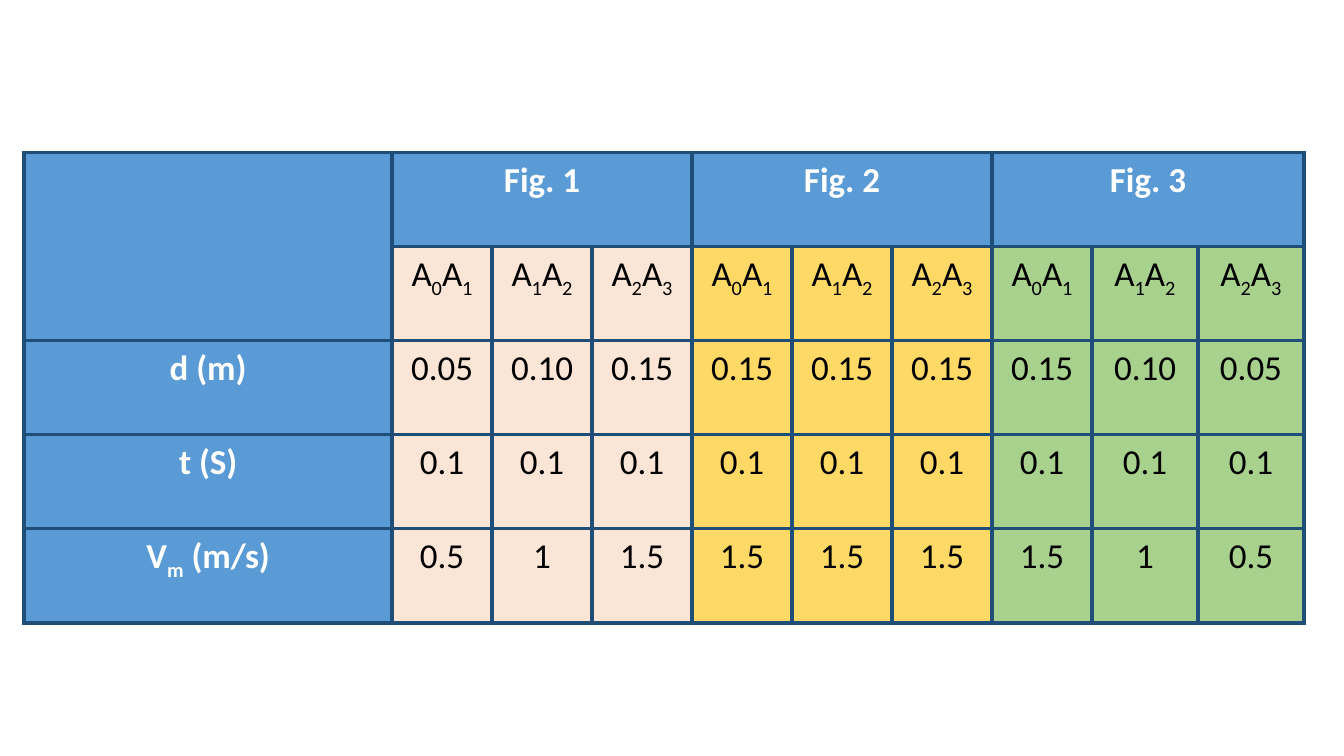
from dataclasses import dataclass

from lxml import etree
from pptx import Presentation
from pptx.dml.color import RGBColor
from pptx.enum.text import MSO_ANCHOR, PP_ALIGN
from pptx.oxml.ns import qn
from pptx.table import Table, _Cell
from pptx.util import Cm, Pt

CENTER = PP_ALIGN.CENTER
TOP = MSO_ANCHOR.TOP
COLORS = {
    "header": "5B9BD5",
    "border": "1F4E79",
    "header_text": "FFFFFF",
    "value_text": "000000",
    "peach": "FBE5D6",
    "yellow": "FFD966",
    "green": "A9D18E",
}
CELL_FORMAT = {
    "margin_left": Cm(0.18),
    "margin_right": Cm(0.18),
    "margin_top": Cm(0),
    "margin_bottom": Cm(0),
    "vertical_anchor": TOP,
}
PARAGRAPH_FORMAT = {"alignment": CENTER, "line_spacing": 1.15}
BORDER_WIDTH = Pt(3)
COLUMN_WIDTHS = [9.27] + [2.52] * 7 + [2.67] * 2
ROW_HEIGHT = 2.37
# An underscore makes the next character a subscript
ROW_LABELS = ["d (m)", "t (S)", "V_m (m/s)"]
INTERVALS = ["A_0A_1", "A_1A_2", "A_2A_3"]
ROW_COUNT = 2 + len(ROW_LABELS)


@dataclass
class Figure:
    title: str
    color: str
    distances: list[str]
    speeds: list[str]

    def value_rows(self) -> list[list[str]]:
        return [INTERVALS, self.distances, ["0.1"] * 3, self.speeds]


FIGURES = [
    Figure("Fig. 1", "peach", ["0.05", "0.10", "0.15"], ["0.5", "1", "1.5"]),
    Figure("Fig. 2", "yellow", ["0.15"] * 3, ["1.5"] * 3),
    Figure("Fig. 3", "green", ["0.15", "0.10", "0.05"], ["1.5", "1", "0.5"]),
]


def set_attributes(target: object, values: dict) -> None:
    for name, value in values.items():
        setattr(target, name, value)


def add_borders(cell: _Cell) -> None:
    properties = cell._tc.get_or_add_tcPr()
    for index, side in enumerate(("a:lnL", "a:lnR", "a:lnT", "a:lnB")):
        line = etree.Element(qn(side), w=str(BORDER_WIDTH))
        fill = etree.SubElement(line, qn("a:solidFill"))
        etree.SubElement(fill, qn("a:srgbClr"), val=COLORS["border"])
        properties.insert(index, line)


def write_text(cell: _Cell, text: str, is_header: bool) -> None:
    first, *others = text.split("_")
    pieces = [(first, False)]
    for part in others:
        pieces += [(part[0], True), (part[1:], False)]

    paragraph = cell.text_frame.paragraphs[0]
    set_attributes(paragraph, PARAGRAPH_FORMAT)
    color = COLORS["header_text" if is_header else "value_text"]
    for piece, is_subscript in pieces:
        if not piece:
            continue
        run = paragraph.add_run()
        run.text = piece
        set_attributes(run.font, {"name": "Calibri", "size": Pt(25), "bold": is_header})
        run.font.color.rgb = RGBColor.from_string(color)
        if is_subscript:
            run.font._element.set("baseline", "-25000")


def format_cell(cell: _Cell, color: str) -> None:
    set_attributes(cell, CELL_FORMAT)
    cell.fill.solid()
    cell.fill.fore_color.rgb = RGBColor.from_string(COLORS[color])
    add_borders(cell)


def fill_table(table: Table) -> None:
    # Sizes, fills and borders
    for column, width in zip(table.columns, COLUMN_WIDTHS):
        column.width = Cm(width)
    for row_index, row in enumerate(table.rows):
        row.height = Cm(ROW_HEIGHT)
        for column_index, cell in enumerate(row.cells):
            is_header = row_index == 0 or column_index == 0
            figure = FIGURES[(column_index - 1) // 3]
            format_cell(cell, "header" if is_header else figure.color)

    # Row labels
    table.cell(0, 0).merge(table.cell(1, 0))
    for row_index, label in enumerate(ROW_LABELS, start=2):
        write_text(table.cell(row_index, 0), label, True)

    # One block of three columns for each figure
    for figure_index, figure in enumerate(FIGURES):
        left = 1 + 3 * figure_index
        title_cell = table.cell(0, left)
        title_cell.merge(table.cell(0, left + 2))
        write_text(title_cell, figure.title, True)
        for row_index, values in enumerate(figure.value_rows(), start=1):
            for offset, value in enumerate(values):
                write_text(table.cell(row_index, left + offset), value, False)


def main() -> None:
    presentation = Presentation()
    presentation.slide_width = Cm(33.87)
    presentation.slide_height = Cm(19.05)
    slide = presentation.slides.add_slide(presentation.slide_layouts[6])
    frame = slide.shapes.add_table(
        ROW_COUNT, len(COLUMN_WIDTHS), Cm(0.61), Cm(3.84),
        Cm(sum(COLUMN_WIDTHS)), Cm(ROW_HEIGHT * ROW_COUNT),
    )
    fill_table(frame.table)
    presentation.save("out.pptx")


if __name__ == "__main__":
    main()
